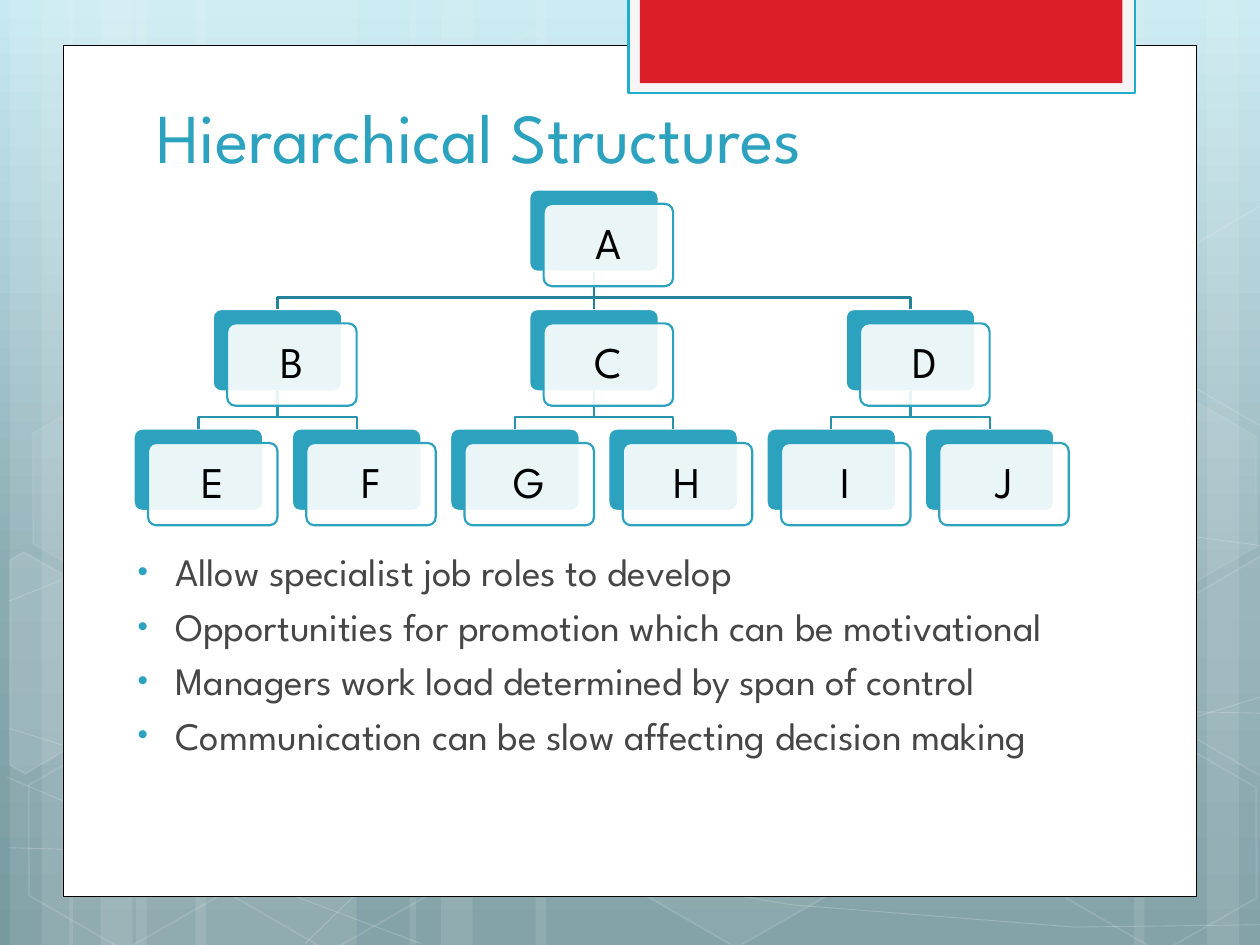
from copy import deepcopy
from dataclasses import dataclass
from lxml.etree import SubElement
from pptx import Presentation
from pptx.dml.color import RGBColor
from pptx.enum.shapes import MSO_CONNECTOR, MSO_SHAPE
from pptx.enum.text import MSO_ANCHOR, MSO_AUTO_SIZE, PP_ALIGN
from pptx.oxml.ns import qn
from pptx.util import Cm, Pt


@dataclass(frozen=True)
class Theme:
    font: str = "League Spartan"
    accent: str = "2DA2BF"
    branches: tuple = ("248299", "2993AD")
    white: str = "FFFFFF"
    black: str = "000000"
    body: str = "464646"
    tab: str = "DA1F28"
    tab_frame: str = "F5F5F5"
    tab_line: str = "1FAECD"
    gradient: tuple = ((0, "C7EAF2"), (0.62, "8BABB3"), (1, "7799A0"))
    title_size: float = 40
    node_size: float = 25
    body_size: float = 22.2
    weight: float = 1.25


STRIPS = [
    (2.74, 4.45), (0.2, 1.27), (0.84, 2.12), (3.94, 4.45), (1.4, 1.27), (2.03, 2.12),
    (18.62, 4.45), (24.33, 1.27), (22.86, 2.12), (10.8, 7.82), (8.26, 1.27), (8.89, 2.12),
]
SWEEPS = [
    [(0.18, 17.09), (4.83, 17.22), (11.63, 16.89), (20.12, 15.67), (25.58, 14)],
    [(0.18, 12.12), (3.07, 10.95), (8.81, 9.83), (16.61, 9.83), (25.58, 11.02)],
    [(0.15, 15.67), (4.7, 17.6), (8.48, 19.02)],
    [(0.18, 14.68), (3.25, 15.65), (9.07, 17.09), (15.95, 18.24), (21.67, 18.69), (25.58, 18.64)],
    [(6.15, 19.02), (7.67, 17.55), (10.57, 15.88), (15.44, 14.68), (20.17, 14.27), (25.55, 14.38)],
]
HEXAGONS = [
    (8.48, 0.91, 4, 8), (12.62, 14.96, 6, 12), (0.28, 15.01, 0, 12), (0.36, 7.92, 7, 8),
    (4.42, 15.04, 0, 12), (21.18, 15.06, 0, 12), (21.18, 7.98, 7, 8),
]
CUT_HEXAGONS = [
    ([(0.2, 11.3), (0.48, 11.13), (2.44, 12.24), (2.41, 14.48), (0.51, 15.6), (0.2, 15.42)], 10),
    ([(23.52, 12.32), (25.43, 11.2), (25.63, 11.33), (25.63, 15.57), (25.45, 15.67),
      (23.52, 14.55)], 4),
    ([(23.52, 5.26), (25.43, 4.14), (25.65, 4.27), (25.63, 8.51), (25.45, 8.61),
      (23.52, 7.49)], 0),
]
TREE = {"A": "BCD", "B": "EF", "C": "GH", "D": "IJ"}
LEVELS = ("A", "BCD", "EFGHIJ")
FIRST_CENTRE, LEAF_PITCH = 4, 3.19
FIRST_TOP, LEVEL_PITCH = 3.82, 2.41
CARD_WIDTH, CARD_HEIGHT, CARD_OFFSET = 2.61, 1.66, 0.29
BRANCH_DROP = 0.52
POINTS = [
    "Allow specialist job roles to develop",
    "Opportunities for promotion which can be motivational",
    "Managers work load determined by span of control",
    "Communication can be slow affecting decision making",
]


def node_centre(name):
    if name not in TREE:
        return FIRST_CENTRE + LEAF_PITCH * LEVELS[-1].index(name)
    return sum(map(node_centre, TREE[name])) / len(TREE[name])


class SlideBuilder:
    def __init__(self, presentation, theme):
        self.theme = theme
        self.slide = presentation.slides.add_slide(presentation.slide_layouts[1])

    def background(self):
        fill = self.slide.background.fill
        fill.gradient()
        fill.gradient_angle = 270
        stops = self.slide.element.find(".//" + qn("a:gsLst"))
        stops.append(deepcopy(stops[0]))
        for stop, (position, color) in zip(fill.gradient_stops, self.theme.gradient):
            stop.position = position
            stop.color.rgb = RGBColor.from_string(color)

    def paint(self, fill, parent, color, opacity):
        fill.solid()
        fill.fore_color.rgb = RGBColor.from_string(color)
        if opacity < 100:
            tone = parent.find(qn("a:solidFill")).find(qn("a:srgbClr"))
            SubElement(tone, qn("a:alpha"), val=str(opacity * 1000))

    def style(self, shape, fill=None, opacity=100, line=None, weight=1, line_opacity=100):
        shape.shadow.inherit = False
        properties = shape.element.spPr
        if fill and opacity:
            self.paint(shape.fill, properties, fill, opacity)
        else:
            shape.fill.background()
        if line:
            shape.line.width = Pt(weight)
            self.paint(shape.line.fill, properties.find(qn("a:ln")), line, line_opacity)
        else:
            shape.line.fill.background()
        return shape

    def box(self, left, top, width, height, kind=MSO_SHAPE.RECTANGLE, **look):
        shape = self.slide.shapes.add_shape(kind, *map(Cm, (left, top, width, height)))
        return self.style(shape, **look)

    def outline(self, points, close=False, **look):
        start, *rest = [(Cm(x), Cm(y)) for x, y in points]
        builder = self.slide.shapes.build_freeform(*start)
        builder.add_line_segments(rest, close=close)
        return self.style(builder.convert_to_shape(), **look)

    def hexagon(self, left, top, opacity, line_opacity):
        white = self.theme.white
        shape = self.box(left, top, 4.45, 3.86, MSO_SHAPE.HEXAGON, fill=white,
                         opacity=opacity, line=white, line_opacity=line_opacity)
        shape.adjustments[0], shape.adjustments[1] = 0.29, 1.15
        shape.rotation = 30

    def card(self, name, level, offset=0, **look):
        left = node_centre(name) - CARD_WIDTH / 2 + offset
        top = FIRST_TOP + LEVEL_PITCH * level + offset
        shape = self.box(left, top, CARD_WIDTH, CARD_HEIGHT, MSO_SHAPE.ROUNDED_RECTANGLE,
                         weight=self.theme.weight, **look)
        shape.adjustments[0] = 0.1
        return shape

    def label(self, shape, text):
        shape.text_frame.vertical_anchor = MSO_ANCHOR.MIDDLE
        paragraph = shape.text_frame.paragraphs[0]
        paragraph.text = text
        paragraph.alignment = PP_ALIGN.CENTER
        paragraph.line_spacing = 0.9
        self.font(paragraph, self.theme.node_size, self.theme.black)

    def branch(self, parent, child, level, cards):
        color, weight = self.theme.branches[level], self.theme.weight
        start, end = node_centre(parent), node_centre(child)
        top = FIRST_TOP + LEVEL_PITCH * (level + 1)
        bottom = top - LEVEL_PITCH + CARD_HEIGHT
        if abs(start - end) > 0.01:
            bend = bottom + BRANCH_DROP
            self.outline([(start, bottom), (start, bend), (end, bend), (end, top)],
                         line=color, weight=weight)
            return
        connector = self.slide.shapes.add_connector(
            MSO_CONNECTOR.STRAIGHT, Cm(start), Cm(bottom), Cm(end), Cm(top))
        connector.begin_connect(cards[parent], 2)
        connector.end_connect(cards[child], 0)
        connector.line.width = Pt(weight)
        connector.line.color.rgb = RGBColor.from_string(color)
        SubElement(connector.element.spPr, qn("a:effectLst"))

    def hierarchy(self):
        accent, white = self.theme.accent, self.theme.white
        nodes = [(name, level) for level, names in enumerate(LEVELS) for name in names]
        cards = {name: self.card(name, level, fill=accent, line=white) for name, level in nodes}
        for name, level in nodes:
            for child in TREE.get(name, ""):
                self.branch(name, child, level, cards)
        for name, level in nodes:
            front = self.card(name, level, CARD_OFFSET, fill=white, opacity=90, line=accent)
            self.label(front, name)

    def font(self, paragraph, size, color):
        paragraph.font.name = self.theme.font
        paragraph.font.size = Pt(size)
        paragraph.font.color.rgb = RGBColor.from_string(color)

    def placeholder(self, index, text, bounds, anchor):
        shape = self.slide.placeholders[index]
        shape.left, shape.top, shape.width, shape.height = map(Cm, bounds)
        shape.element.getparent().append(shape.element)
        frame = shape.text_frame
        frame.text = text
        frame.word_wrap = True
        frame.auto_size = MSO_AUTO_SIZE.NONE
        frame.vertical_anchor = anchor
        return frame.paragraphs

    def title(self, text):
        paragraph, = self.placeholder(0, text, (2.9, 0.53, 19.5, 3.18), MSO_ANCHOR.BOTTOM)
        paragraph.alignment = PP_ALIGN.LEFT
        self.font(paragraph, self.theme.title_size, self.theme.accent)

    def bullets(self, items):
        bounds = (2.31, 10.92, 20.2, 6.8)
        for paragraph in self.placeholder(1, "\n".join(items), bounds, MSO_ANCHOR.TOP):
            properties = paragraph._p.get_or_add_pPr()
            properties.set("marL", str(Cm(0.97)))
            properties.set("indent", str(Cm(-0.76)))
            color = SubElement(properties, qn("a:buClr"))
            SubElement(color, qn("a:srgbClr"), val=self.theme.accent)
            SubElement(properties, qn("a:buSzPct"), val="76000")
            SubElement(properties, qn("a:buChar"), char="•")
            self.font(paragraph, self.theme.body_size, self.theme.body)


def main():
    presentation = Presentation()
    presentation.slide_width, presentation.slide_height = Cm(25.4), Cm(19.05)
    theme = Theme()
    white = theme.white
    builder = SlideBuilder(presentation, theme)
    builder.background()
    for left, width in STRIPS:
        builder.box(left, 0, width, 19.05, fill=white, opacity=10)
    for points in SWEEPS:
        builder.outline(points, line=white, weight=0.5, line_opacity=20)
    for hexagon in HEXAGONS:
        builder.hexagon(*hexagon)
    for points, opacity in CUT_HEXAGONS:
        builder.outline(points, True, fill=white, opacity=opacity, line=white, line_opacity=12)
    builder.box(1.27, 0.91, 22.86, 17.17, fill=white, line=theme.black, weight=0.5)
    builder.box(12.67, -0.05, 10.21, 1.93, fill=theme.tab_frame, line=theme.tab_line,
                weight=theme.weight)
    builder.box(12.9, -0.05, 9.73, 1.73, fill=theme.tab)
    builder.title("Hierarchical Structures")
    builder.hierarchy()
    builder.bullets(POINTS)
    presentation.save("out.pptx")


if __name__ == "__main__":
    main()
